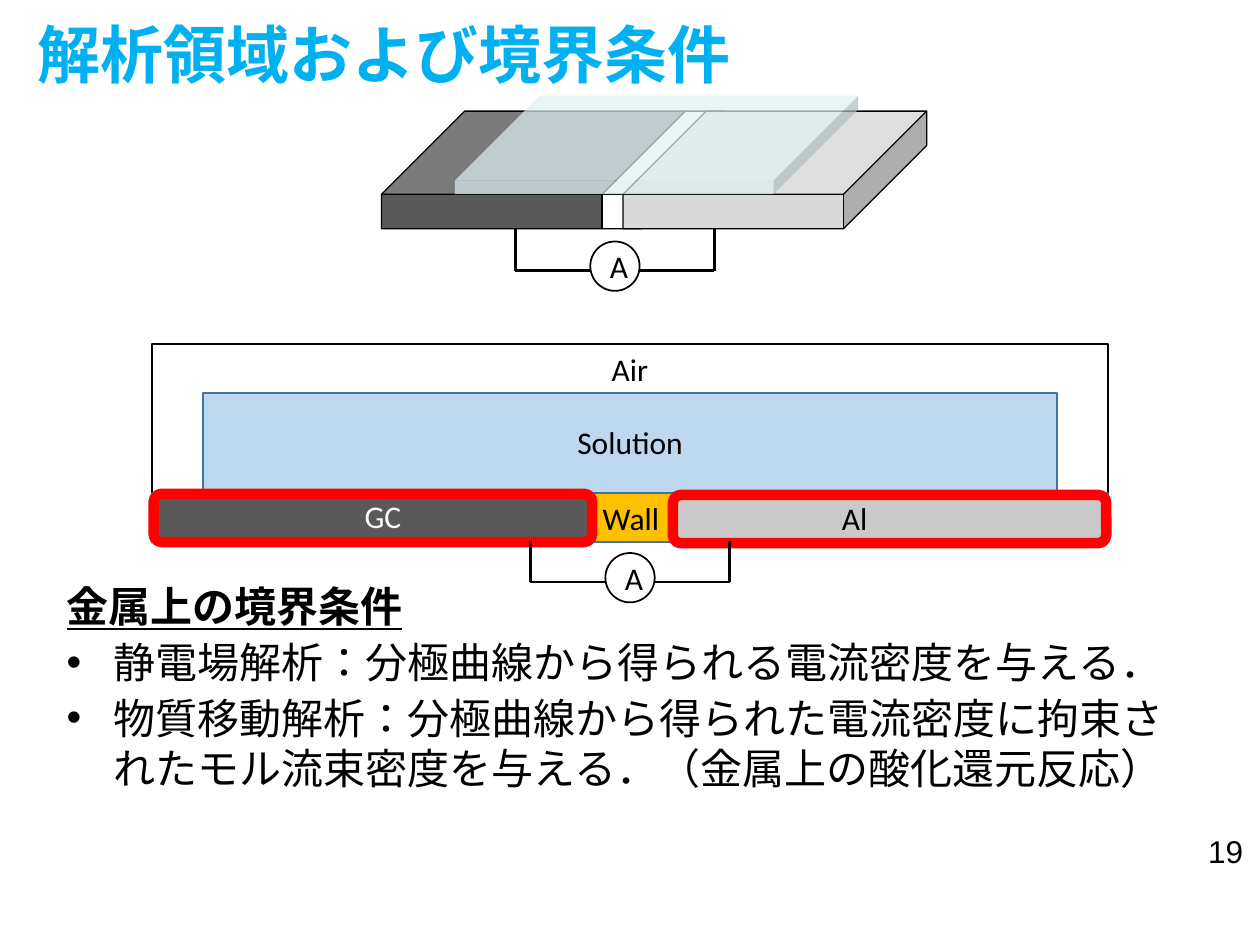
from dataclasses import dataclass

from lxml import etree
from pptx import Presentation
from pptx.dml.color import RGBColor
from pptx.enum import lang, shapes, text
from pptx.oxml import ns
from pptx.util import Pt

MSO = shapes.MSO_SHAPE


@dataclass(frozen=True)
class Theme:
    black: str = "000000"
    white: str = "FFFFFF"
    title: str = "00B0F0"
    carbon: str = "595959"
    aluminium: str = "C9C9C9"
    plate: str = "D9D9D9"
    solution: str = "BDD7EE"
    wall: str = "FFC000"
    film: str = "DAEDEF"
    edge: str = "43739E"
    marker: str = "FF0000"
    heading_font: str = "Arial"
    label_font: str = "Calibri"
    title_size: int = 36
    body_size: int = 24
    label_size: int = 18


class SlideBuilder:
    def __init__(self, slide, theme):
        self.s, self.t = slide, theme

    def format(self, p, size, color, font, bold=False, underline=False):
        for r in p.runs:
            f = r.font
            f.size, f.name, f.bold, f.underline = Pt(size), font, bold, underline
            f.color.rgb = RGBColor.from_string(color)
            f.language_id = lang.MSO_LANGUAGE_ID.JAPANESE

    def box(self, x, y, w, h, wrap=True):
        sp = self.s.shapes.add_textbox(Pt(x), Pt(y), Pt(w), Pt(h))
        sp.text_frame.word_wrap = wrap
        return sp.text_frame

    def label(self, content, x, y, w, color=None):
        tf = self.box(x, y, w, 29, wrap=False)
        tf.text = content
        p = tf.paragraphs[0]
        p.alignment = text.PP_ALIGN.CENTER
        self.format(p, self.t.label_size, color or self.t.black, self.t.label_font)

    def shape(self, kind, x, y, w, h, fill=None, line=None, width=1, adj=None, opacity=None):
        sp = self.s.shapes.add_shape(kind, Pt(x), Pt(y), Pt(w), Pt(h))
        sp.shadow.inherit = False
        if adj is not None:
            sp.adjustments[0] = adj
        if fill:
            sp.fill.solid()
            sp.fill.fore_color.rgb = RGBColor.from_string(fill)
        else:
            sp.fill.background()
        if opacity is not None:
            clr = sp.fill._xPr.find(".//" + ns.qn("a:srgbClr"))
            etree.SubElement(clr, ns.qn("a:alpha")).set("val", str(opacity * 1000))
        if line:
            sp.line.color.rgb = RGBColor.from_string(line)
            sp.line.width = Pt(width)
        else:
            sp.line.fill.background()
        return sp

    def wire(self, x1, y1, x2, y2):
        c = self.s.shapes.add_connector(
            shapes.MSO_CONNECTOR.STRAIGHT, Pt(x1), Pt(y1), Pt(x2), Pt(y2))
        c.line.color.rgb = RGBColor.from_string(self.t.black)
        c.line.width = Pt(1.5)
        etree.SubElement(c._element.spPr, ns.qn("a:effectLst"))

    def ammeter(self, left, top, bottom):
        span, d = 113.8, 28.2
        right, x = left + span, left + (span - d) / 2
        sp = self.shape(MSO.OVAL, x, bottom - 16.6, d, d, self.t.white, self.t.black)
        tf = sp.text_frame
        tf.text = "A"
        tf.vertical_anchor = text.MSO_ANCHOR.MIDDLE
        p = tf.paragraphs[0]
        p.alignment = text.PP_ALIGN.CENTER
        self.format(p, self.t.label_size, self.t.black, self.t.label_font)
        for end, rim in ((left, x), (right, x + d)):
            self.wire(end, top, end, bottom)
            self.wire(end, bottom, rim, bottom)

    def heading(self, content, x, y, w, h):
        tf = self.box(x, y, w, h)
        tf.text = content
        tf.vertical_anchor = text.MSO_ANCHOR.MIDDLE
        self.format(tf.paragraphs[0], self.t.title_size, self.t.title,
                    self.t.heading_font, bold=True)

    def bullets(self, head, items, x, y, w, h):
        tf = self.box(x, y, w, h)
        tf.text = head
        style = (self.t.body_size, self.t.black, self.t.heading_font)
        self.format(tf.paragraphs[0], *style, bold=True, underline=True)
        for item in items:
            p = tf.add_paragraph()
            p.text = item
            p.space_before = Pt(3)
            pPr = p._p.get_or_add_pPr()
            pPr.set("marL", str(Pt(27)))
            pPr.set("indent", str(-Pt(27)))
            etree.SubElement(pPr, ns.qn("a:buFont")).set("typeface", "Arial")
            etree.SubElement(pPr, ns.qn("a:buChar")).set("char", "•")
            self.format(p, *style)

    def page_number(self, content, x, y, w, h):
        tf = self.box(x, y, w, h, wrap=False)
        tf.text = content
        self.format(tf.paragraphs[0], self.t.label_size, self.t.black, self.t.heading_font)


def main():
    prs = Presentation()
    prs.slide_width, prs.slide_height = Pt(720), Pt(540)
    t = Theme()
    b = SlideBuilder(prs.slides.add_slide(prs.slide_layouts[6]), t)

    # Title and page number
    b.page_number("19", 683.3, 471.6, 36.7, 29)
    b.heading("解析領域および境界条件", 14.4, 6.5, 692, 48)

    # Cross-section: air, electrodes, solution
    left, mid, half, base, thick = 87, 360, 273, 281.5, 28.2
    b.shape(MSO.RECTANGLE, left, 196.5, 2 * half, 113.2, t.white, t.black)
    b.shape(MSO.RECTANGLE, mid, base, half, thick, t.aluminium, t.edge)
    b.shape(MSO.RECTANGLE, left, base, half, thick, t.carbon, t.edge)
    b.label("Air", 337.7, 196.5, 44.6)
    b.label("Al", 470, 281.5, 36.7)
    b.shape(MSO.RECTANGLE, 116, 224.8, 488, 56.7, t.solution, t.edge)
    b.label("Solution", 312.2, 238.3, 95.6)

    # Boundary conditions
    b.bullets("金属上の境界条件", [
        "静電場解析：分極曲線から得られる電流密度を与える．",
        "物質移動解析：分極曲線から得られた電流密度に拘束された"
        "モル流束密度を与える．（金属上の酸化還元反応）",
    ], 31, 328.3, 648, 197)

    # Wall and highlighted metal surfaces
    b.shape(MSO.RECTANGLE, 338.4, base, 46, thick, t.wall, t.edge)
    b.label("Wall", 336, 281.5, 49)
    for x, y, w in ((87.8, 282.2, 250.6), (384.5, 282.8, 247.7)):
        b.shape(MSO.ROUNDED_RECTANGLE, x, y, w, 27.6, line=t.marker, width=6)

    # Cell in perspective, with its ammeter
    b.ammeter(294.5, 120.2, 154.6)
    for x, w, fill in ((218, 173.5, t.carbon), (344.2, 69.8, t.white), (356, 173.5, t.plate)):
        b.shape(MSO.CUBE, x, 63.5, w, 67.2, fill, t.black, 0.75, adj=0.707)
    b.shape(MSO.CUBE, 260, 54.7, 230.4, 56.2, t.film, adj=0.86, opacity=70)

    # Ammeter under the cross-section
    b.ammeter(303.1, 309, 332.6)
    b.label("GC", 200.8, 280.3, 36, t.white)

    prs.save("out.pptx")


if __name__ == "__main__":
    main()
